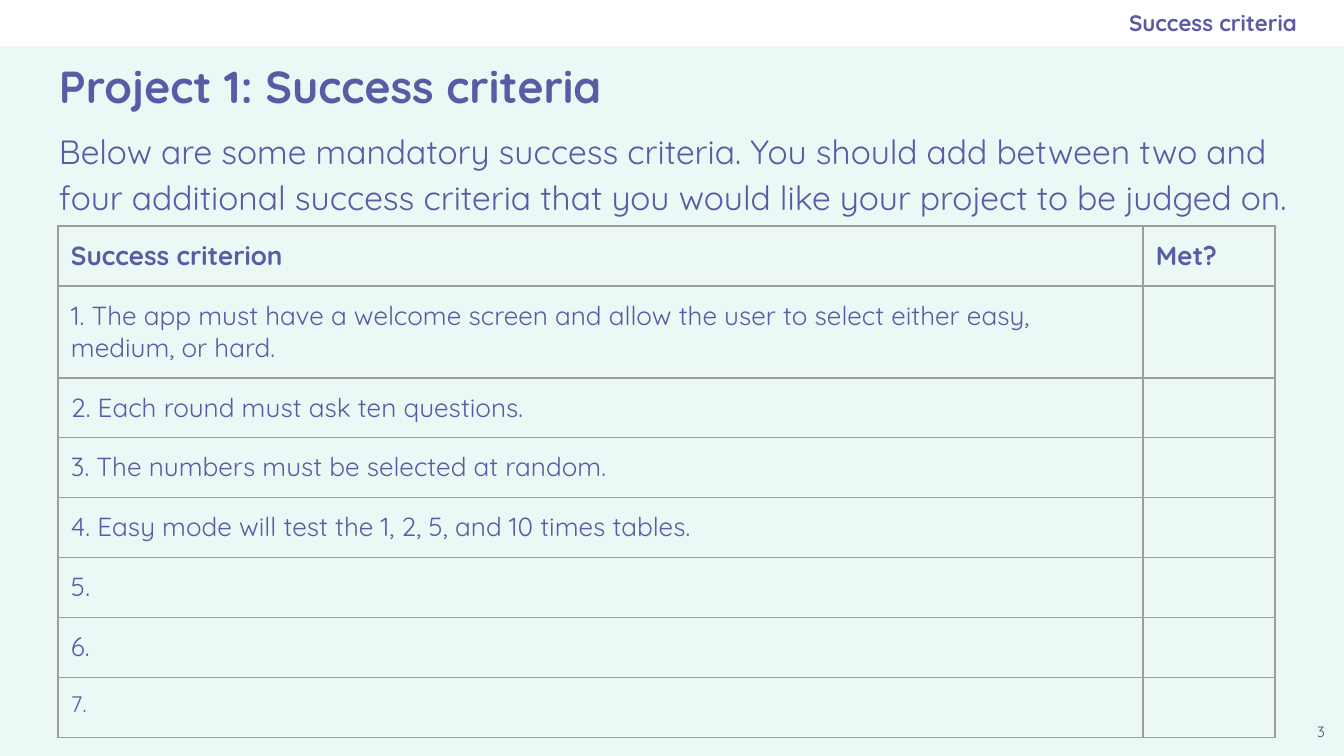
from dataclasses import dataclass

from lxml import etree
from pptx import Presentation
from pptx import util as u
from pptx.dml.color import RGBColor
from pptx.enum import shapes, text
from pptx.oxml.ns import qn

PX_PER_INCH = 134.4
FONT = "Quicksand"
PURPLE, DARK_PURPLE = "5B5BA5", "494985"
MINT, WHITE, GREY = "ECF8F5", "FFFFFF", "9E9E9E"
INSET = 13
LEFT, CENTER, RIGHT = text.PP_ALIGN.LEFT, text.PP_ALIGN.CENTER, text.PP_ALIGN.RIGHT
TOP, MIDDLE = text.MSO_ANCHOR.TOP, text.MSO_ANCHOR.MIDDLE


@dataclass
class Label:
    words: str
    box: tuple[int, int, int, int]
    size: int
    bold: bool = False
    color: str = PURPLE
    align: text.PP_ALIGN = LEFT
    anchor: text.MSO_ANCHOR = TOP
    spacing: float = 1.0
    right_inset: int = INSET


@dataclass
class Row:
    criterion: str
    met: str = ""
    height: int = 60
    size: int = 14
    bold: bool = False


TITLE = Label("Project 1: Success criteria", (46, 35, 1253, 102), 24, bold=True, anchor=MIDDLE)
LABELS = [
    Label("3", (1298, 710, 46, 46), 8, color=DARK_PURPLE, align=CENTER),
    Label("Below are some mandatory success criteria. You should add between two and "
          "four additional success criteria that you would like your project to be judged on.",
          (46, 112, 1262, 102), 18, spacing=1.15),
    Label("Success criteria", (773, 0, 524, 46), 12, bold=True, align=RIGHT,
          anchor=MIDDLE, right_inset=0),
]
ROWS = [
    Row("Success criterion", "Met?", bold=True),
    Row("1. The app must have a welcome screen and allow the user to select either easy, "
        "medium, or hard.", height=92),
    Row("2. Each round must ask ten questions."),
    Row("3. The numbers must be selected at random."),
    Row("4. Easy mode will test the 1, 2, 5, and 10 times tables."),
    Row("5."),
    Row("6."),
    Row("7.", size=12),
]
COLUMNS = (1085, 132)


def px(n: int) -> u.Emu:
    return u.Emu(round(n * 914400 / PX_PER_INCH))


def rgb(color: str) -> RGBColor:
    return RGBColor.from_string(color)


def add_run(p, words: str, size: int, bold: bool, color: str) -> None:
    r = p.add_run()
    r.text = words
    r.font.name = FONT
    r.font.size = u.Pt(size)
    r.font.bold = bold
    r.font.color.rgb = rgb(color)


def fill_label(sp, label: Label) -> None:
    sp.left, sp.top, sp.width, sp.height = map(px, label.box)
    tf = sp.text_frame
    tf.word_wrap = True
    tf.auto_size = text.MSO_AUTO_SIZE.NONE
    tf.vertical_anchor = label.anchor
    tf.margin_left = tf.margin_top = tf.margin_bottom = px(INSET)
    tf.margin_right = px(label.right_inset)
    p = tf.paragraphs[0]
    p.alignment = label.align
    p.line_spacing = label.spacing
    add_run(p, label.words, label.size, label.bold, label.color)


def set_borders(cell) -> None:
    tc_pr = cell._tc.get_or_add_tcPr()
    for side in ("a:lnL", "a:lnR", "a:lnT", "a:lnB"):
        ln = etree.SubElement(tc_pr, qn(side), w=str(u.Pt(0.75)))
        fill = etree.SubElement(ln, qn("a:solidFill"))
        etree.SubElement(fill, qn("a:srgbClr"), val=GREY)


def fill_cell(cell, words: str, row: Row) -> None:
    """Write one cell; an empty one keeps the row's text size so the row stays low."""
    cell.margin_left = cell.margin_right = px(INSET)
    cell.margin_top = cell.margin_bottom = px(INSET)
    set_borders(cell)
    cell.fill.background()
    p = cell.text_frame.paragraphs[0]
    if words:
        add_run(p, words, row.size, row.bold, PURPLE)
    else:
        etree.SubElement(p._p, qn("a:endParaRPr"), sz=str(row.size * 100))


def add_criteria_table(s, left: int, top: int) -> None:
    height = sum(row.height for row in ROWS)
    table = s.shapes.add_table(len(ROWS), len(COLUMNS), px(left), px(top),
                               px(sum(COLUMNS)), px(height)).table
    table.first_row = table.horz_banding = False
    for column, width in zip(table.columns, COLUMNS):
        column.width = px(width)
    for i, row in enumerate(ROWS):
        table.rows[i].height = px(row.height)
        for j, words in enumerate((row.criterion, row.met)):
            fill_cell(table.cell(i, j), words, row)


def main() -> None:
    prs = Presentation()
    prs.slide_width, prs.slide_height = px(1344), px(756)
    s = prs.slides.add_slide(prs.slide_layouts[5])
    s.background.fill.solid()
    s.background.fill.fore_color.rgb = rgb(MINT)

    band = s.shapes.add_shape(shapes.MSO_SHAPE.RECTANGLE, 0, 0, px(1344), px(46))
    band.shadow.inherit = False
    band.fill.solid()
    band.fill.fore_color.rgb = rgb(WHITE)
    band.line.fill.background()

    fill_label(s.shapes.title, TITLE)
    for label in LABELS:
        fill_label(s.shapes.add_textbox(0, 0, 0, 0), label)
    add_criteria_table(s, 58, 226)
    prs.save("out.pptx")


if __name__ == "__main__":
    main()
